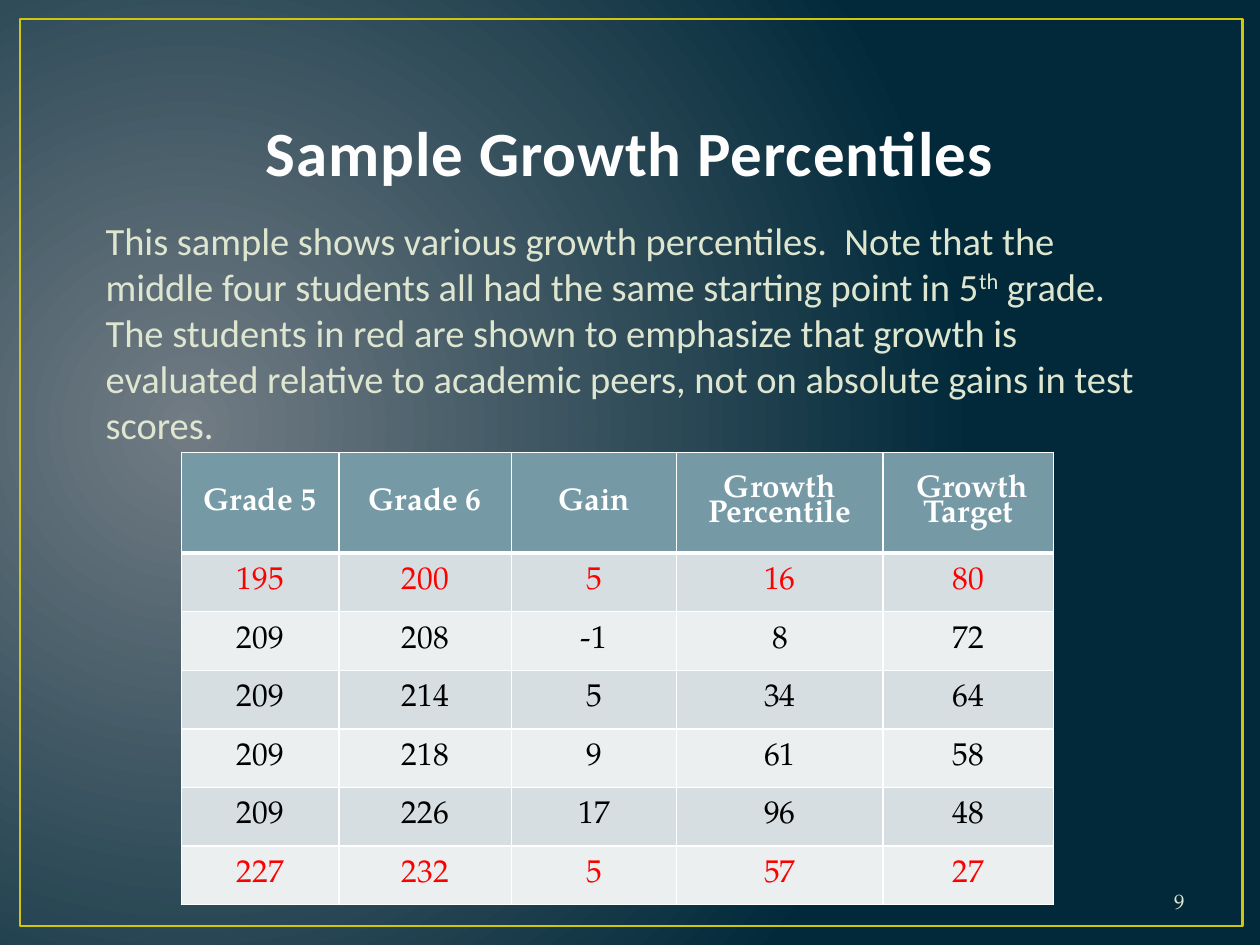
from lxml.etree import SubElement, Element
from pptx import Presentation
from pptx.dml.color import RGBColor
from pptx.enum.shapes import MSO_SHAPE as Shape
from pptx.enum.text import MSO_ANCHOR as Anchor, MSO_AUTO_SIZE as AutoSize, PP_ALIGN as Align
from pptx.oxml.ns import qn
from pptx.util import Inches, Pt

WHITE = RGBColor(0xFF, 0xFF, 0xFF)
TITLE_WHITE = RGBColor(0xFE, 0xFE, 0xFE)
TITLE_EDGE = RGBColor(0x38, 0x4F, 0x55)
PALE_GREEN = RGBColor(0xDF, 0xE6, 0xD0)
GOLD = RGBColor(0xCF, 0xC6, 0x0D)
GLOW = RGBColor(0x71, 0x7C, 0x84)
NAVY = RGBColor(0x01, 0x29, 0x3A)
HEADER = RGBColor(0x75, 0x9A, 0xA5)
BANDS = RGBColor(0xD6, 0xDE, 0xE1), RGBColor(0xEC, 0xEF, 0xF0)
RED = RGBColor(0xFF, 0x00, 0x00)
BLACK = RGBColor(0x00, 0x00, 0x00)

HEADINGS = ["Grade 5", "Grade 6", "Gain", "Growth Percentile", " Growth Target"]
STUDENTS = [
    (195, 200, 5, 16, 80),
    (209, 208, -1, 8, 72),
    (209, 214, 5, 34, 64),
    (209, 218, 9, 61, 58),
    (209, 226, 17, 96, 48),
    (227, 232, 5, 57, 27),
]
SHARED_START = 209
COLUMN_WIDTHS = [1.25, 1.37, 1.31, 1.64, 1.35]
HEADER_HEIGHT, ROW_HEIGHT = 0.8, 0.465
EXPLANATION = [
    ("This sample shows various growth percentiles.  Note that the middle four "
     "students all had the same starting point in 5", False),
    ("th", True),
    (" grade.  The students in red are shown to emphasize that growth is evaluated "
     "relative to academic peers, not on absolute gains in test scores.", False),
]


class SlideBuilder:
    sans = "Calibri"
    serif = "TeX Gyre Pagella"

    def __init__(self, slide):
        self.slide = slide

    def style(self, run, face, size, color, bold=False):
        run.font.name = face
        run.font.size = Pt(size)
        run.font.color.rgb = color
        run.font.bold = bold

    def line(self, tag, color, width):
        line = Element(qn(tag), w=str(Pt(width)))
        SubElement(SubElement(line, qn("a:solidFill")), qn("a:srgbClr"), val=str(color))
        return line

    def background(self, inner, outer):
        fill = self.slide.background.fill
        fill.gradient()
        for stop, color, position in zip(fill.gradient_stops, (inner, outer), (0, 1)):
            stop.color.rgb = color
            stop.position = position
        gradient = self.slide.background._cSld.find(".//" + qn("a:gradFill"))
        gradient.remove(gradient.find(qn("a:lin")))
        circle = SubElement(gradient, qn("a:path"), path="circle")
        SubElement(circle, qn("a:fillToRect"), l="15000", t="50000", r="85000", b="60000")

    def frame(self, left, top, width, height):
        border = self.slide.shapes.add_shape(
            Shape.RECTANGLE, Inches(left), Inches(top), Inches(width), Inches(height))
        border.shadow.inherit = False
        border.fill.background()
        border.line.color.rgb = GOLD
        border.line.width = Pt(1.5)

    def title(self, text, left, top, width, height):
        title = self.slide.shapes.title
        title.left, title.top = Inches(left), Inches(top)
        title.width, title.height = Inches(width), Inches(height)
        title.text_frame.text = text
        title.text_frame.vertical_anchor = Anchor.BOTTOM
        heading = title.text_frame.paragraphs[0]
        heading.alignment = Align.CENTER
        self.style(heading.runs[0], self.sans, 36, TITLE_WHITE, True)
        properties = heading.runs[0].font._element
        properties.set("spc", "50")
        properties.insert(0, self.line("a:ln", TITLE_EDGE, 1.05))

    def text(self, parts, left, top, width, height, face, size,
             align=Align.LEFT, anchor=Anchor.TOP, fit=AutoSize.NONE):
        box = self.slide.shapes.add_textbox(
            Inches(left), Inches(top), Inches(width), Inches(height))
        frame = box.text_frame
        frame.word_wrap = True
        frame.auto_size = fit
        frame.vertical_anchor = anchor
        paragraph = frame.paragraphs[0]
        paragraph.alignment = align
        for wording, raised in parts:
            run = paragraph.add_run()
            run.text = wording
            self.style(run, face, size, PALE_GREEN)
            if raised:
                run.font._element.set("baseline", "30000")

    def cell(self, cell, value, fill, color, bold, top_edge, bottom_edge):
        properties = cell._tc.get_or_add_tcPr()
        for side, width in zip("LRTB", (1, 1, top_edge, bottom_edge)):
            properties.append(self.line(f"a:ln{side}", WHITE, width))
        cell.fill.solid()
        cell.fill.fore_color.rgb = fill
        cell.vertical_anchor = Anchor.MIDDLE
        cell.text_frame.text = str(value)
        paragraph = cell.text_frame.paragraphs[0]
        paragraph.alignment = Align.CENTER
        if bold:
            paragraph.line_spacing = 0.8
        self.style(paragraph.runs[0], self.serif, 18, color, bold)

    def table(self, headings, students, left, top):
        height = HEADER_HEIGHT + ROW_HEIGHT * len(students)
        table = self.slide.shapes.add_table(
            len(students) + 1, len(headings), Inches(left), Inches(top),
            Inches(sum(COLUMN_WIDTHS)), Inches(height)).table
        for column, width in zip(table.columns, COLUMN_WIDTHS):
            column.width = Inches(width)
        for index, values in enumerate([headings, *students]):
            is_header = index == 0
            table.rows[index].height = Inches(HEADER_HEIGHT if is_header else ROW_HEIGHT)
            if is_header:
                fill, color = HEADER, WHITE
            else:
                fill = BANDS[(index - 1) % 2]
                color = BLACK if values[0] == SHARED_START else RED
            for column, value in enumerate(values):
                self.cell(table.cell(index, column), value, fill, color, is_header,
                          3 if index == 1 else 1, 3 if is_header else 1)


def main():
    deck = Presentation()
    deck.slide_width, deck.slide_height = Inches(10), Inches(7.5)
    builder = SlideBuilder(deck.slides.add_slide(deck.slide_layouts[5]))
    builder.background(GLOW, NAVY)
    builder.frame(0.16, 0.15, 9.7, 7.2)
    builder.title("Sample Growth Percentiles", 0.5, 0.3, 9, 1.25)
    builder.text([("9", False)], 8.67, 6.95, 0.83, 0.4, builder.serif, 12,
                 align=Align.RIGHT, anchor=Anchor.MIDDLE)
    builder.table(HEADINGS, STUDENTS, 1.44, 3.59)
    builder.text(EXPLANATION, 0.74, 1.67, 8.6, 1.58, builder.sans, 22,
                 fit=AutoSize.SHAPE_TO_FIT_TEXT)
    deck.save("out.pptx")


if __name__ == "__main__":
    main()
